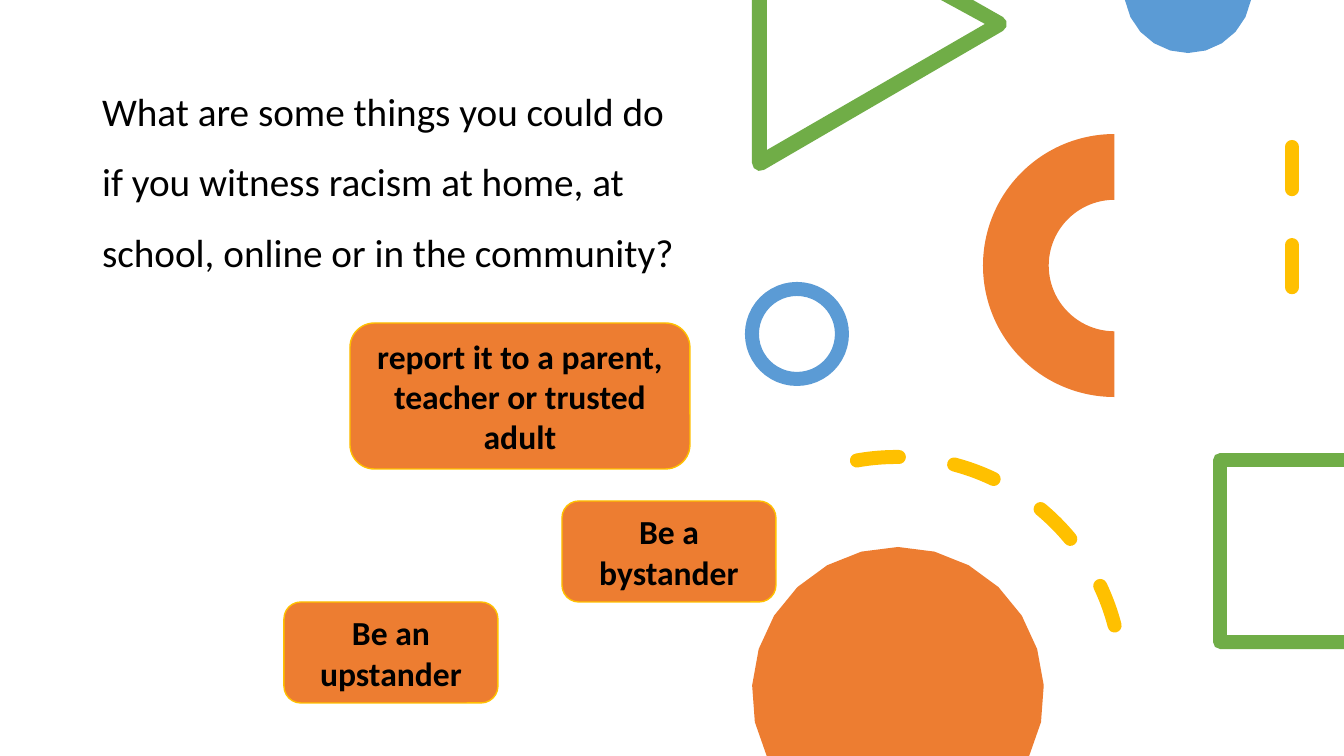
from math import cos, radians, sin

from pptx import Presentation
from pptx.dml.color import RGBColor
from pptx.enum.dml import MSO_LINE as Dash
from pptx.enum.shapes import MSO_CONNECTOR as Connector, MSO_SHAPE as Shape
from pptx.enum.text import MSO_ANCHOR as Anchor, MSO_AUTO_SIZE as AutoSize, PP_ALIGN as Align
from pptx.oxml.ns import qn
from pptx.oxml.xmlchemy import OxmlElement
from pptx.util import Pt

WIDTH, HEIGHT = 1344, 756
SCALE = 12192000 / WIDTH

THEME = {
    "blue": RGBColor.from_string("5B9BD5"),
    "orange": RGBColor.from_string("ED7D31"),
    "green": RGBColor.from_string("70AD47"),
    "gold": RGBColor.from_string("FFC000"),
    "title": {"name": "Calibri", "size": Pt(28), "bold": False, "color": RGBColor(0, 0, 0)},
    "callout": {"name": "Calibri", "size": Pt(24), "bold": True, "color": RGBColor(0, 0, 0)},
    "thick": Pt(10),
    "thin": Pt(1),
}


def arc_points(x, y, radius, start, end, pieces):
    angles = [radians(start + (end - start) * step / pieces) for step in range(pieces + 1)]
    return [
        (x + radius * cos(angle), min(max(y + radius * sin(angle), 0), HEIGHT))
        for angle in angles
    ]


def write(text_frame, text, style, align):
    text_frame.word_wrap = True
    text_frame.vertical_anchor = Anchor.MIDDLE
    paragraph = text_frame.paragraphs[0]
    paragraph.alignment = align
    run = paragraph.add_run()
    run.text = text
    for name, value in THEME[style].items():
        if name == "color":
            run.font.color.rgb = value
        else:
            setattr(run.font, name, value)
    return paragraph


presentation = Presentation()
presentation.slide_width = round(WIDTH * SCALE)
presentation.slide_height = round(HEIGHT * SCALE)
slide = presentation.slides.add_slide(presentation.slide_layouts[5])
shapes = slide.shapes

title = shapes.title
title_box = {"left": 92, "top": 50, "width": 597, "height": 239}
for name, value in title_box.items():
    setattr(title, name, round(value * SCALE))
question = "What are some things you could do if you witness racism at home, at school, online or in the community?"
paragraph = write(title.text_frame, question, "title", Align.LEFT)
paragraph.line_spacing = 1.5
title.text_frame.auto_size = AutoSize.NONE

triangle = [(752, 0), (767, 0), (767, 150), (985, 24), (941, 0), (973, 0)]
triangle += arc_points(999, 24, 8, -60, 60, 3) + arc_points(760, 163, 8, 60, 180, 3)
square = [(1344, 453), (1344, 467), (1227, 467), (1227, 635), (1344, 635), (1344, 649)]
square += arc_points(1220, 642, 7, 90, 180, 2) + arc_points(1220, 460, 7, 180, 270, 2)

outlines = [
    (arc_points(1188, -11, 64, 10, 170, 10), "blue"),
    (triangle, "green"),
    (square, "green"),
    (arc_points(898, 693, 146, 154, 386, 16), "orange"),
]
for points, color in outlines:
    corners = [(round(x * SCALE), round(y * SCALE)) for x, y in points]
    builder = shapes.build_freeform(*corners[0])
    builder.add_line_segments(corners[1:], close=True)
    shape = builder.convert_to_shape()
    shape.shadow.inherit = False
    shape.fill.solid()
    shape.fill.fore_color.rgb = THEME[color]
    shape.line.fill.background()

presets = [
    (Shape.OVAL, (752, 289, 90, 90), 0, None, "blue", "thick", None),
    (Shape.BLOCK_ARC, (983, 134, 263, 263), 270, "orange", None, None, None),
    (Shape.ARC, (671, 457, 451, 451), 349.9, None, "gold", "thick", None),
    (Shape.ROUNDED_RECTANGLE, (350, 323, 340, 146), 0, "orange", "gold", "thin",
     "report it to a parent, teacher or trusted adult"),
    (Shape.ROUNDED_RECTANGLE, (284, 602, 214, 101), 0, "orange", "gold", "thin", "Be an upstander"),
    (Shape.ROUNDED_RECTANGLE, (562, 501, 214, 101), 0, "orange", "gold", "thin", "Be a bystander"),
]
dashed = []
for kind, box, rotation, fill, line, weight, text in presets:
    shape = shapes.add_shape(kind, *[round(value * SCALE) for value in box])
    shape.shadow.inherit = False
    shape.rotation = rotation
    if fill:
        shape.fill.solid()
        shape.fill.fore_color.rgb = THEME[fill]
    else:
        shape.fill.background()
    if line:
        shape.line.color.rgb = THEME[line]
        shape.line.width = THEME[weight]
    else:
        shape.line.fill.background()
    if text:
        write(shape.text_frame, text, "callout", Align.CENTER)
        shape.text_frame.auto_size = AutoSize.SHAPE_TO_FIT_TEXT
    if kind == Shape.ARC:
        dashed.append(shape)

ends = [round(value * SCALE) for value in (1292, 147, 1292, 323)]
dash_line = shapes.add_connector(Connector.STRAIGHT, *ends)
dash_line.line.color.rgb = THEME["gold"]
dash_line.line.width = THEME["thick"]
dash_line.element.spPr.append(OxmlElement("a:effectLst"))
dashed.append(dash_line)

for shape in dashed:
    shape.line.dash_style = Dash.DASH
    shape.element.spPr.find(qn("a:ln")).set("cap", "rnd")

presentation.save("out.pptx")
